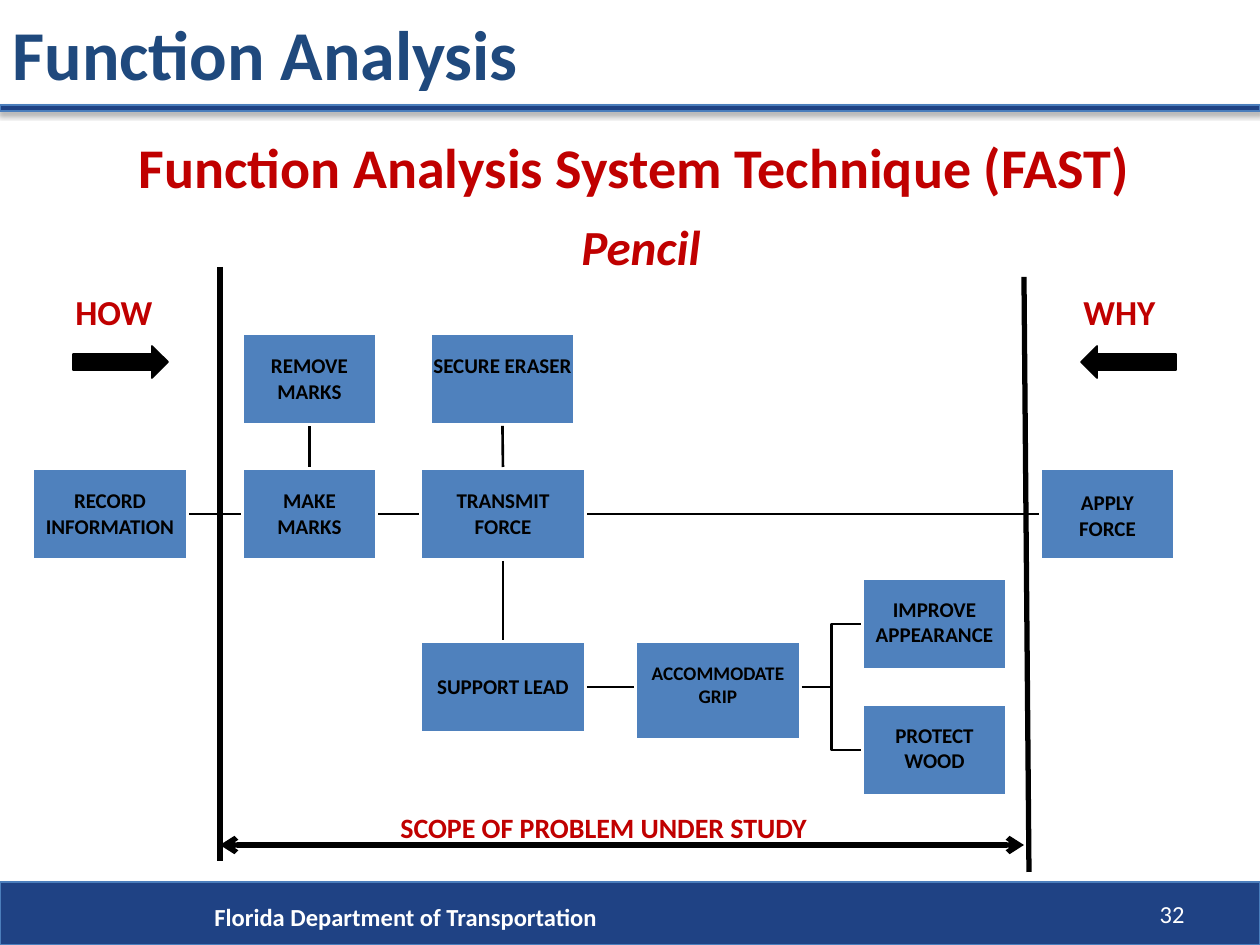
from lxml import etree
from pptx import Presentation
from pptx import util as u
from pptx.dml.color import RGBColor
from pptx.enum import shapes, text
from pptx.oxml import ns

EMU_PER_PX = 914400 / 126
NAVY, BLUE, RED = "1F4284", "4F81BD", "C00000"
BLACK, WHITE = "000000", "FFFFFF"
TOP, LEFT, BOTTOM, RIGHT = range(4)

# Function boxes: label, left, top, width, height, space above the text
FUNCTIONS = [
    ("RECORD INFORMATION", 31, 467, 158, 94, 21),
    ("APPLY FORCE", 1039, 467, 137, 94, 23),
    ("TRANSMIT FORCE", 419, 467, 168, 94, 21),
    ("MAKE MARKS", 241, 467, 137, 94, 21),
    ("REMOVE MARKS", 241, 332, 137, 94, 21),
    ("IMPROVE APPEARANCE", 861, 577, 147, 94, 19),
    ("PROTECT WOOD", 861, 703, 147, 94, 19),
    ("SECURE ERASER", 429, 332, 147, 94, 21),
    ("SUPPORT LEAD", 419, 640, 168, 94, 34),
    ("ACCOMMODATE GRIP", 634, 640, 168, 101, 21),
]

# Straight links: from box and side, to box and side
LINKS = [
    ("APPLY FORCE", LEFT, "TRANSMIT FORCE", RIGHT),
    ("TRANSMIT FORCE", LEFT, "MAKE MARKS", RIGHT),
    ("MAKE MARKS", LEFT, "RECORD INFORMATION", RIGHT),
    ("MAKE MARKS", TOP, "REMOVE MARKS", BOTTOM),
    ("TRANSMIT FORCE", TOP, "SECURE ERASER", BOTTOM),
    ("TRANSMIT FORCE", BOTTOM, "SUPPORT LEAD", TOP),
]


def px(*lengths):
    return [u.Emu(round(n * EMU_PER_PX)) for n in lengths]


def colour(code):
    return RGBColor.from_string(code)


def write(box, words, size, code, align=text.PP_ALIGN.LEFT, bold=True, italic=False):
    frame = box.text_frame
    frame.word_wrap = True
    frame.auto_size = text.MSO_AUTO_SIZE.NONE
    para = frame.paragraphs[0]
    para.alignment = align
    para.space_before = u.Pt(0)
    span = para.add_run()
    span.text = words
    font = span.font
    font.name, font.size, font.bold, font.italic = "Calibri", u.Pt(size), bold, italic
    font.color.rgb = colour(code)
    return para


def add_label(page, place, words, size, code, **style):
    box = page.shapes.add_textbox(*px(*place))
    write(box, words, size, code, **style)


def fill_placeholder(box, place, words, size, code, anchor):
    box.left, box.top, box.width, box.height = px(*place)
    box.text_frame.vertical_anchor = anchor
    return write(box, words, size, code)


def add_block(page, kind, place, fill, line, width):
    box = page.shapes.add_shape(kind, *px(*place))
    box.shadow.inherit = False
    box.fill.solid()
    box.fill.fore_color.rgb = colour(fill)
    box.line.color.rgb = colour(line)
    box.line.width = u.Pt(width)
    return box


def add_bar(page, place):
    bar = add_block(page, shapes.MSO_SHAPE.RECTANGLE, place, NAVY, "4B7EBC", 0.75)
    effects = bar._element.spPr.find(ns.qn("a:effectLst"))
    shadow = etree.SubElement(effects, ns.qn("a:outerShdw"), blurRad=str(u.Pt(3.1)),
                              dist=str(u.Pt(1.8)), dir="5400000", rotWithShape="0")
    shade = etree.SubElement(shadow, ns.qn("a:srgbClr"), val=BLACK)
    etree.SubElement(shade, ns.qn("a:alpha"), val="35000")


def add_function(page, words, left, top, width, height, space_above):
    box = add_block(page, shapes.MSO_SHAPE.RECTANGLE, (left, top, width, height),
                    BLUE, WHITE, 3)
    frame = box.text_frame
    frame.vertical_anchor = text.MSO_ANCHOR.TOP
    frame.margin_top, = px(space_above)
    if words == "SECURE ERASER":  # this label stays on one line
        frame.margin_left = frame.margin_right = 0
    size = 11 if words == "ACCOMMODATE GRIP" else 12
    write(box, words, size, BLACK, align=text.PP_ALIGN.CENTER)
    return box


def add_line(page, ends=(0, 0, 0, 0), width=1.5, kind=shapes.MSO_CONNECTOR.STRAIGHT,
             arrows=False):
    line = page.shapes.add_connector(kind, *px(*ends))
    line.line.color.rgb = colour(BLACK)
    line.line.width = u.Pt(width)
    if arrows:
        for tag in ("a:headEnd", "a:tailEnd"):
            etree.SubElement(line.line._get_or_add_ln(), ns.qn(tag), type="arrow")
    etree.SubElement(line._element.spPr, ns.qn("a:effectLst"))
    return line


def main():
    deck = Presentation()
    deck.slide_width, deck.slide_height = u.Inches(10), u.Inches(7.5)
    page = deck.slides.add_slide(deck.slide_layouts[1])
    title, body = page.placeholders

    # Footer and title rule
    add_bar(page, (0, 882, 1260, 63))
    add_label(page, (202, 896, 1005, 43), "Florida Department of Transportation", 14, WHITE)
    add_bar(page, (0, 105, 1260, 6))
    add_label(page, (903, 893, 294, 45), "32", 14, WHITE,
              align=text.PP_ALIGN.RIGHT, bold=False)

    # Headings
    fill_placeholder(title, (0, 0, 1216, 105), "Function Analysis", 40, "1F497D",
                     text.MSO_ANCHOR.MIDDLE)
    heading = fill_placeholder(body, (126, 126, 1029, 94),
                               "Function Analysis System Technique (FAST)", 32, RED,
                               text.MSO_ANCHOR.TOP)
    props = heading._p.get_or_add_pPr()
    props.set("marL", str(u.Inches(0.38)))
    props.set("indent", str(u.Inches(-0.38)))
    etree.SubElement(props, ns.qn("a:buNone"))
    add_label(page, (557, 210, 168, 72), "Pencil", 28, RED,
              align=text.PP_ALIGN.CENTER, italic=True)

    # Scope limits and reading directions
    add_line(page, (220, 267, 220, 861), 3)
    add_line(page, (1024, 277, 1029, 872), 3)
    for words, left, arrow_left, turn in (("HOW", 63, 73, 0), ("WHY", 1071, 1081, 180)):
        add_label(page, (left, 284, 116, 55), words, 20, RED)
        arrow = add_block(page, shapes.MSO_SHAPE.RIGHT_ARROW, (arrow_left, 346, 95, 32),
                          BLACK, BLACK, 1)
        arrow.rotation = turn
    add_line(page, (220, 845, 1024, 845), 3, arrows=True)
    add_label(page, (388, 804, 441, 47), "SCOPE OF PROBLEM UNDER STUDY", 16, RED)

    # Functions and their links
    boxes = {row[0]: add_function(page, *row) for row in FUNCTIONS}
    for start, start_side, end, end_side in LINKS:
        link = add_line(page)
        link.begin_connect(boxes[start], start_side)
        link.end_connect(boxes[end], end_side)
    link = add_line(page, (587, 687, 634, 687))
    link.begin_connect(boxes["SUPPORT LEAD"], RIGHT)

    # Branches to the two outer functions
    for words, y in (("IMPROVE APPEARANCE", 624), ("PROTECT WOOD", 750)):
        branch = add_line(page, (802, 687, 861, y), kind=shapes.MSO_CONNECTOR.ELBOW)
        branch.end_connect(boxes[words], LEFT)

    deck.save("out.pptx")


if __name__ == "__main__":
    main()
